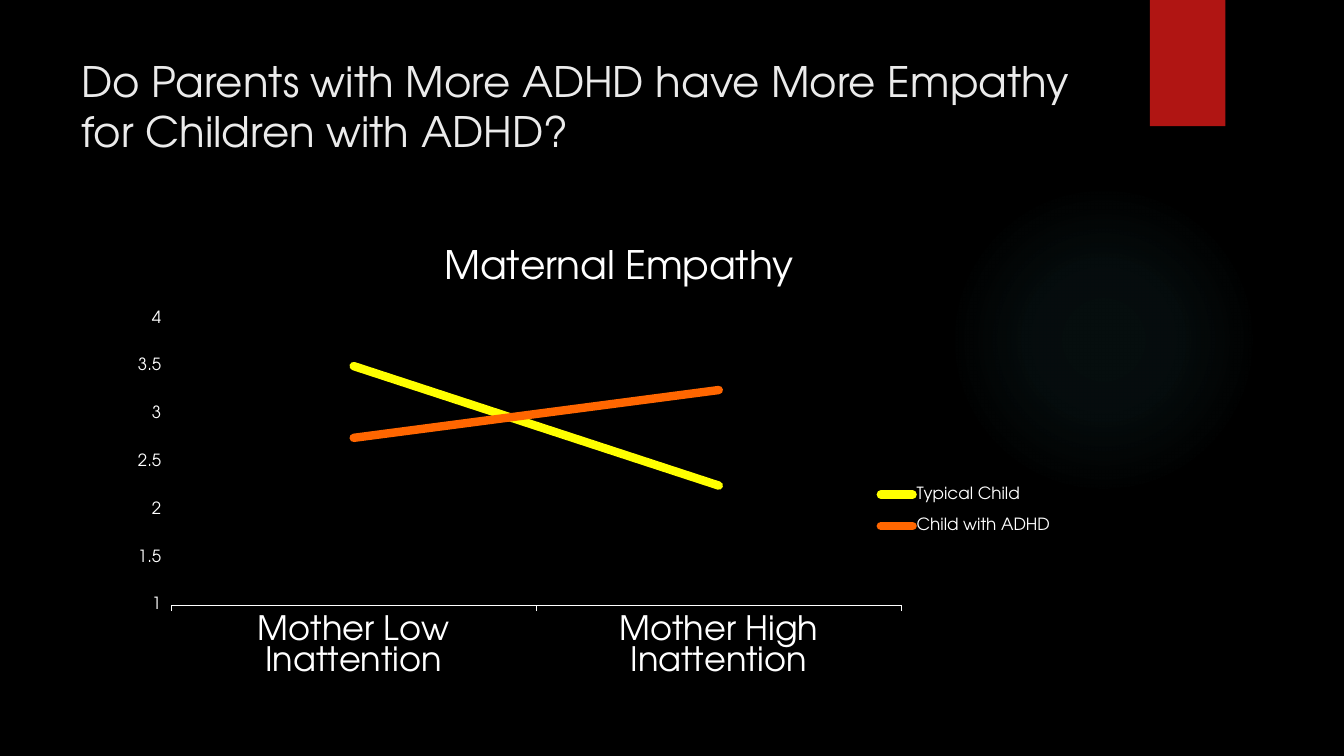
"""Build the maternal empathy slide with its two-line chart."""
from dataclasses import dataclass

from lxml import etree
from pptx import Presentation
from pptx.chart.data import CategoryChartData
from pptx.dml.color import RGBColor
from pptx.enum.chart import XL_CHART_TYPE, XL_LEGEND_POSITION, XL_MARKER_STYLE, XL_TICK_MARK
from pptx.enum.shapes import MSO_SHAPE
from pptx.enum.text import MSO_ANCHOR
from pptx.oxml import parse_xml
from pptx.oxml.ns import qn
from pptx.util import Cm, Pt

HEADLINE = "Do Parents with More ADHD have More Empathy for Children with ADHD?"
CHART_TITLE = "Maternal Empathy"
MOTHERS = ["Mother Low Inattention", "Mother High Inattention"]
CHILDREN = [
    ("Typical Child", (3.5, 2.25), "FFFF00"),
    ("Child with ADHD", (2.75, 3.25), "FF6600"),
]
EMPATHY_SCALE = (1, 4, 0.5)
GLOW_STOPS = [(0, 7), (36, 6), (69, 0)]

SLIDE_SIZE = (33.87, 19.05)
HEADLINE_BOX = (1.8, 1.27, 26.14, 3.89)
GLOW_BOX = (23.9, 4.65, 7.82, 7.82)
RIBBON_BOX = (28.98, 0, 1.9, 3.18)
CHART_BOX = (3.07, 5.69, 24.87, 11.66)
PLOT_PART = (0.05, 0.2, 0.74, 0.62)
LEGEND_PART = (0.76, 0.53, 0.19, 0.17)
TITLE_PART = (0.32, 0.03)


@dataclass(frozen=True)
class Theme:
    font: str = "TeX Gyre Adventor"
    background: str = "000000"
    headline: str = "EBEBEB"
    text: str = "FFFFFF"
    ribbon: str = "B01513"
    glow: str = "50B9C1"
    headline_size: float = 30
    title_size: float = 28
    category_size: float = 24
    label_size: float = 12
    axis_width: float = 0.75
    series_width: float = 6


THEME = Theme()


def rgb(color):
    return RGBColor.from_string(color)


def style_font(font, size, color=THEME.text):
    font.name, font.size, font.bold = THEME.font, Pt(size), False
    font.color.rgb = rgb(color)


def write_text(frame, text, **font_format):
    frame.text = text
    style_font(frame.paragraphs[0].runs[0].font, **font_format)


def place(element, index, part):
    for old in element.findall(qn("c:layout")):
        element.remove(old)
    layout = etree.Element(qn("c:layout"))
    manual = etree.SubElement(layout, qn("c:manualLayout"))
    settings = [("xMode", "edge"), ("yMode", "edge"), *zip("xywh", part)]
    if element.tag == qn("c:plotArea"):
        settings.insert(0, ("layoutTarget", "inner"))
    for tag, value in settings:
        etree.SubElement(manual, qn(f"c:{tag}")).set("val", str(value))
    element.insert(index, layout)


def add_plain_shape(slide, kind, box, color):
    shape = slide.shapes.add_shape(kind, *map(Cm, box))
    shape.shadow.inherit = False
    shape.line.fill.background()
    shape.fill.solid()
    shape.fill.fore_color.rgb = rgb(color)
    return shape


def add_glow(slide):
    glow = add_plain_shape(slide, MSO_SHAPE.OVAL, GLOW_BOX, THEME.glow)
    stops = "".join(
        f'<a:gs pos="{position * 1000}"><a:srgbClr val="{THEME.glow}">'
        f'<a:alpha val="{alpha * 1000}"/></a:srgbClr></a:gs>'
        for position, alpha in GLOW_STOPS
    )
    gradient = parse_xml(
        '<a:gradFill xmlns:a="http://schemas.openxmlformats.org/drawingml/2006/main">'
        f'<a:gsLst>{stops}</a:gsLst><a:path path="circle">'
        '<a:fillToRect l="50000" t="50000" r="50000" b="50000"/></a:path></a:gradFill>'
    )
    properties = glow.element.spPr
    properties.replace(properties.find(qn("a:solidFill")), gradient)


def add_headline(slide):
    frame = slide.shapes.add_textbox(*map(Cm, HEADLINE_BOX)).text_frame
    frame.word_wrap = True
    frame.vertical_anchor = MSO_ANCHOR.TOP
    write_text(frame, HEADLINE, size=THEME.headline_size, color=THEME.headline)


def style_axes(chart):
    mothers, empathy = chart.category_axis, chart.value_axis
    style_font(mothers.tick_labels.font, THEME.category_size)
    mothers.major_tick_mark = XL_TICK_MARK.OUTSIDE
    mothers.format.line.color.rgb = rgb(THEME.text)
    mothers.format.line.width = Pt(THEME.axis_width)
    style_font(empathy.tick_labels.font, THEME.label_size)
    empathy.minimum_scale, empathy.maximum_scale, empathy.major_unit = EMPATHY_SCALE
    empathy.has_major_gridlines = False
    empathy.major_tick_mark = XL_TICK_MARK.OUTSIDE
    empathy.format.line.fill.background()


def add_empathy_chart(slide):
    data = CategoryChartData()
    data.categories = MOTHERS
    for name, values, _ in CHILDREN:
        data.add_series(name, values)
    chart = slide.shapes.add_chart(XL_CHART_TYPE.LINE, *map(Cm, CHART_BOX), data).chart
    style_font(chart.font, THEME.label_size)

    title = chart.chart_title
    write_text(title.text_frame, CHART_TITLE, size=THEME.title_size)
    place(title.text_frame._txBody.getparent().getparent(), 1, TITLE_PART)

    chart.has_legend = True
    legend = chart.legend
    legend.position = XL_LEGEND_POSITION.RIGHT
    legend.include_in_layout = False
    style_font(legend.font, THEME.label_size)
    place(chart.element.find(".//" + qn("c:legend")), 1, LEGEND_PART)
    place(chart.element.find(".//" + qn("c:plotArea")), 0, PLOT_PART)

    style_axes(chart)
    chart.plots[0].vary_by_categories = False
    for series, (_, _, color) in zip(chart.plots[0].series, CHILDREN):
        series.smooth = False
        series.marker.style = XL_MARKER_STYLE.NONE
        series.format.line.color.rgb = rgb(color)
        series.format.line.width = Pt(THEME.series_width)
        series.format.line._ln.set("cap", "rnd")


def main():
    deck = Presentation()
    deck.slide_width, deck.slide_height = map(Cm, SLIDE_SIZE)
    slide = deck.slides.add_slide(deck.slide_layouts[6])
    slide.background.fill.solid()
    slide.background.fill.fore_color.rgb = rgb(THEME.background)
    add_glow(slide)
    add_plain_shape(slide, MSO_SHAPE.RECTANGLE, RIBBON_BOX, THEME.ribbon)
    add_headline(slide)
    add_empathy_chart(slide)
    deck.save("out.pptx")


if __name__ == "__main__":
    main()
